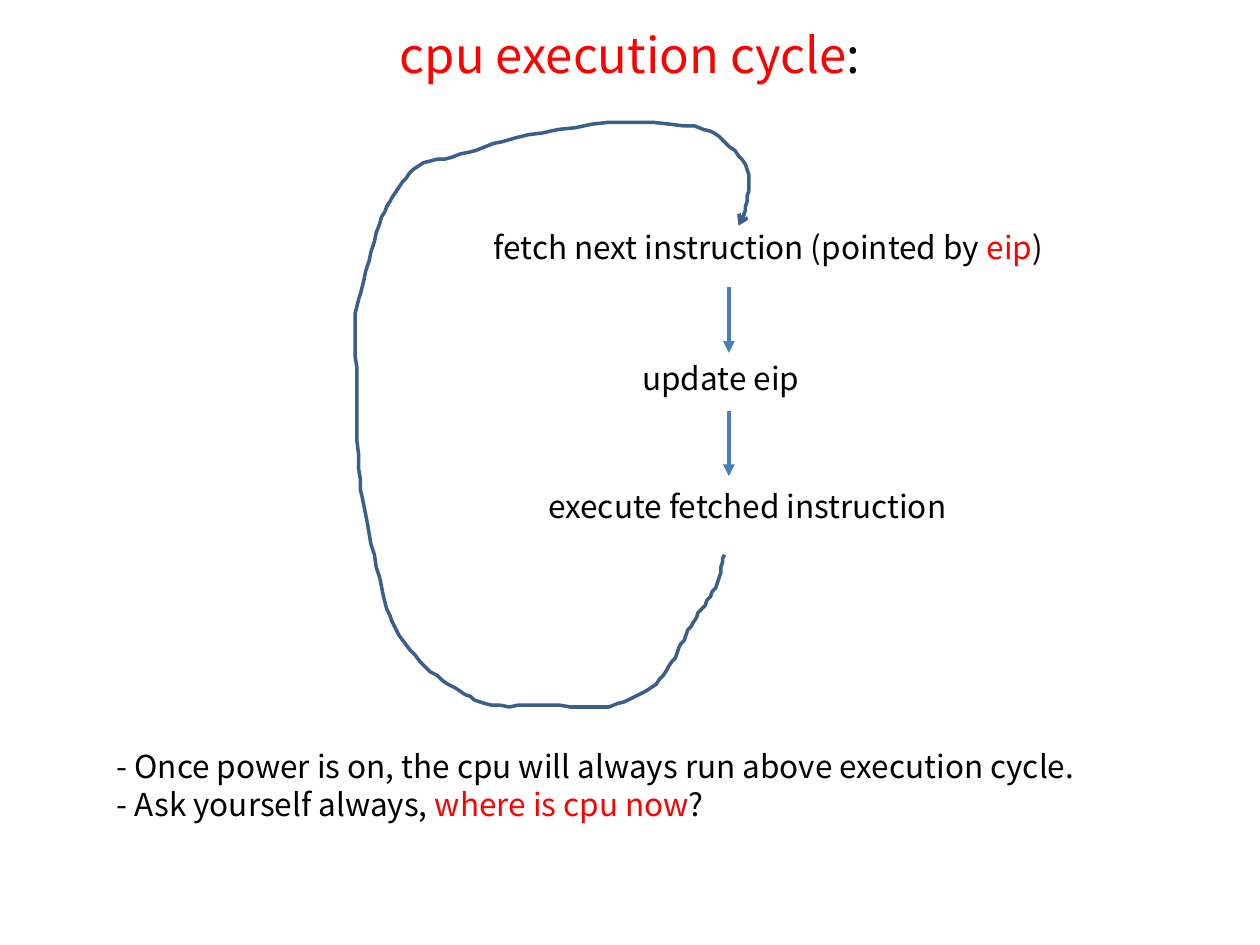
"""Build the cpu execution cycle slide."""
from dataclasses import dataclass

import lxml.etree
import pptx
import pptx.dml.color
import pptx.enum.shapes
import pptx.enum.text
import pptx.oxml.ns
import pptx.util

Pt = pptx.util.Pt
RGB = pptx.dml.color.RGBColor
qn = pptx.oxml.ns.qn
Point = tuple[float, float]


@dataclass(frozen=True)
class Theme:
    font: str = "Noto Sans CJK KR"
    title_size: float = 28
    body_size: float = 18
    text: RGB = RGB(0, 0, 0)
    accent: RGB = RGB(0xFF, 0, 0)
    arrow: RGB = RGB(0x4B, 0x7E, 0xBC)
    loop: RGB = RGB(0x3A, 0x5F, 0x8C)
    arrow_width: float = 2.25
    loop_width: float = 2


@dataclass(frozen=True)
class Run:
    text: str
    accent: bool = False


@dataclass(frozen=True)
class TextBox:
    left: float
    top: float
    width: float
    height: float
    paragraphs: tuple[tuple[Run, ...], ...]
    is_title: bool = False


THEME = Theme()
STEP_HEIGHT, STEP_WIDTH = 29, 334.8

TITLE = TextBox(36, 7.2, 648, 46.8, ((Run("cpu execution cycle", True), Run(":")),), True)
FETCH = TextBox(275, 126.7, STEP_WIDTH, STEP_HEIGHT, (
    (Run("fetch next instruction (pointed by "), Run("eip", True), Run(")")),))
UPDATE = TextBox(360, 201.6, 113, STEP_HEIGHT, ((Run("update eip"),),))
EXECUTE = TextBox(306.2, 275, STEP_WIDTH, STEP_HEIGHT, (
    (Run("execute fetched instruction"),),))
NOTES = TextBox(59.5, 423.2, 595.4, 51, (
    (Run("- Once power is on, the cpu will always run above execution cycle."),),
    (Run("- Ask yourself always, "), Run("where is cpu now", True), Run("?")),
))

ARROW_X = UPDATE.left + UPDATE.width / 2
ARROW_LENGTH = 37.4
ARROW_TOP, ARROW_PITCH = UPDATE.top - ARROW_LENGTH, 70.5

DOWN_FROM_EXECUTE = ((413.5, 317), (410, 333), (401, 348), (392, 363), (384, 378), (372, 393))
ALONG_BOTTOM = ((348, 403.5), (314, 403), (281, 403), (263, 395), (243, 381))
UP_LEFT_SIDE = ((226, 359), (218, 335), (210, 299), (205, 268), (204, 217),
                (203, 183), (208, 160), (217, 128), (226, 110))
OVER_TOP = ((239, 95), (263, 88.5), (294, 79), (347, 70.5), (397, 72.5))
DOWN_TO_FETCH = ((415, 81.5), (427, 97), (427, 115), (422.5, 129))
LOOP_KNOTS = DOWN_FROM_EXECUTE + ALONG_BOTTOM + UP_LEFT_SIDE + OVER_TOP + DOWN_TO_FETCH
LOOP_STEPS = 6


def add_text(s, box: TextBox):
    sp = s.shapes.add_textbox(Pt(box.left), Pt(box.top), Pt(box.width), Pt(box.height))
    tf = sp.text_frame
    tf.word_wrap = True
    if box.is_title:
        tf.vertical_anchor = pptx.enum.text.MSO_ANCHOR.MIDDLE
    else:
        tf.auto_size = pptx.enum.text.MSO_AUTO_SIZE.SHAPE_TO_FIT_TEXT
    for i, runs in enumerate(box.paragraphs):
        p = tf.add_paragraph() if i else tf.paragraphs[0]
        if box.is_title:
            p.alignment = pptx.enum.text.PP_ALIGN.CENTER
        for run in runs:
            r = p.add_run()
            r.text = run.text
            r.font.name = THEME.font
            r.font.size = Pt(THEME.title_size if box.is_title else THEME.body_size)
            r.font.color.rgb = THEME.accent if run.accent else THEME.text
            for tag in ("a:ea", "a:cs"):
                lxml.etree.SubElement(r.font._element, qn(tag), typeface=THEME.font)
    return sp


def style_line(sp, color: RGB, width: float, head: str) -> None:
    sp.line.color.rgb = color
    sp.line.width = Pt(width)
    lxml.etree.SubElement(sp.line._get_or_add_ln(), qn("a:tailEnd"), type=head)


def add_arrow(s, top: float):
    sp = s.shapes.add_connector(
        pptx.enum.shapes.MSO_CONNECTOR.STRAIGHT,
        Pt(ARROW_X), Pt(top), Pt(ARROW_X), Pt(top + ARROW_LENGTH))
    style_line(sp, THEME.arrow, THEME.arrow_width, "triangle")
    lxml.etree.SubElement(sp._element.spPr, qn("a:effectLst"))
    return sp


def spline(a: float, b: float, c: float, d: float, t: float) -> float:
    return b + t / 2 * (c - a + t * (2 * a - 5 * b + 4 * c - d
                                     + t * (3 * (b - c) + d - a)))


def smooth_curve(knots: tuple[Point, ...], steps: int) -> list[Point]:
    padded = (knots[0], *knots, knots[-1])
    points = [knots[0]]
    for window in zip(padded, padded[1:], padded[2:], padded[3:]):
        xs, ys = zip(*window)
        for i in range(1, steps + 1):
            points.append((spline(*xs, i / steps), spline(*ys, i / steps)))
    return points


def add_loop(s) -> None:
    start, *rest = smooth_curve(LOOP_KNOTS, LOOP_STEPS)
    builder = s.shapes.build_freeform(*start, scale=Pt(1))
    builder.add_line_segments(rest, close=False)
    sp = builder.convert_to_shape()
    sp.fill.background()
    sp.shadow.inherit = False
    style_line(sp, THEME.loop, THEME.loop_width, "arrow")


def main() -> None:
    prs = pptx.Presentation()
    prs.slide_width, prs.slide_height = Pt(720), Pt(540)
    s = prs.slides.add_slide(prs.slide_layouts[6])
    _, _, update, _ = [add_text(s, box) for box in (TITLE, FETCH, UPDATE, EXECUTE)]
    to_update, _ = [add_arrow(s, ARROW_TOP + i * ARROW_PITCH) for i in range(2)]
    to_update.end_connect(update, 0)
    add_loop(s)
    add_text(s, NOTES)
    prs.save("out.pptx")


if __name__ == "__main__":
    main()
